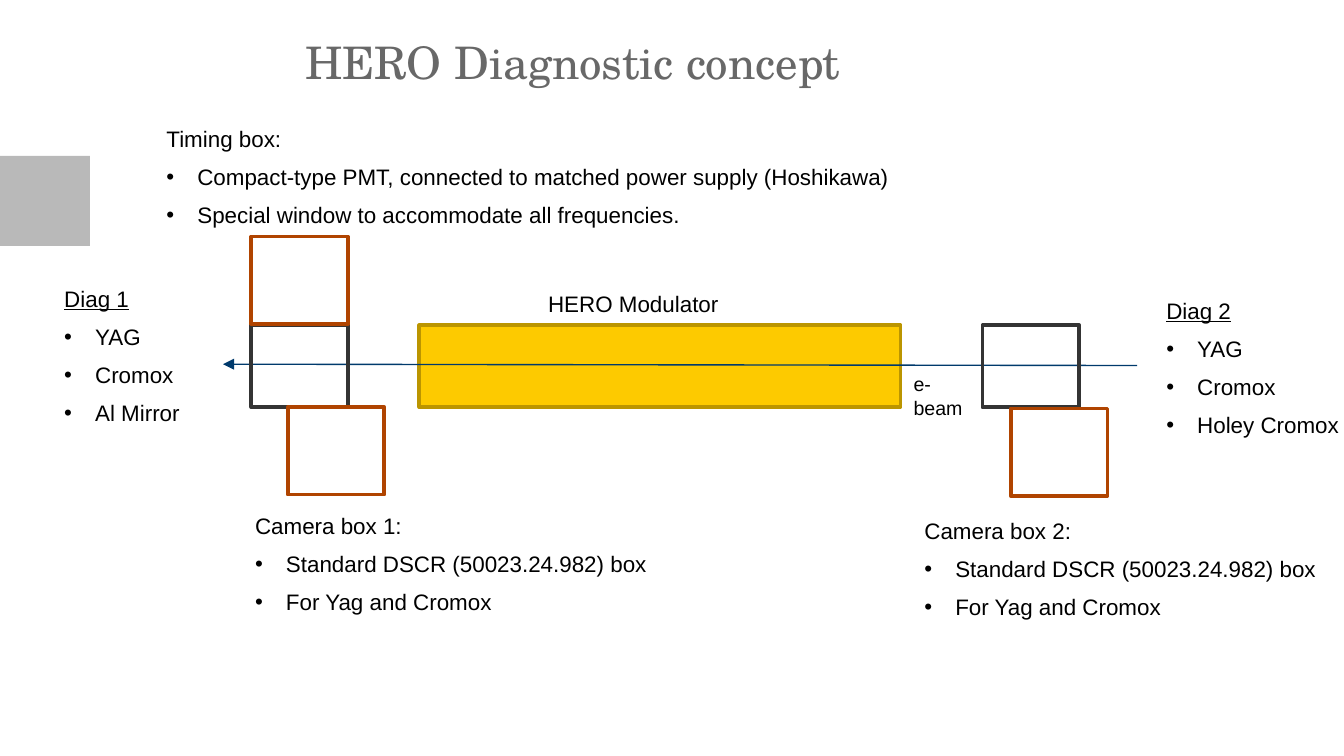
from lxml.etree import SubElement
from pptx import Presentation
from pptx.dml.color import RGBColor
from pptx.enum.shapes import MSO_CONNECTOR, MSO_SHAPE
from pptx.enum.text import MSO_ANCHOR, MSO_AUTO_SIZE, PP_ALIGN
from pptx.oxml.ns import qn
from pptx.util import Inches, Pt

COLORS = {
    "title": "686868", "text": "000000", "marker": "B9B9B9",
    "modulator": "FDCA00", "modulator_edge": "BB9500",
    "beam": "003A6C", "chamber": "343434", "box": "B04400",
}
TITLE = "HERO Diagnostic concept"
CAMERA_ITEMS = ["Standard DSCR (50023.24.982) box", "For Yag and Cromox"]

# heading, underlined, bullets, (left, top, width, height)
NOTES = [
    ("HERO Modulator", False, [], (3.98, 2.11, 1.48, 0.3)),
    ("Diag 1", True, ["YAG", "Cromox", "Al Mirror"], (0.38, 2.07, 1.07, 1.21)),
    ("Diag 2", True, ["YAG", "Cromox", "Holey Cromox"], (8.58, 2.16, 1.5, 1.21)),
    ("Camera box 1:", False, CAMERA_ITEMS, (1.8, 3.76, 3.14, 0.91)),
    ("Timing box:", False,
     ["Compact-type PMT, connected to matched power supply (Hoshikawa)",
      "Special window to accommodate all frequencies."],
     (1.14, 0.88, 5.68, 0.91)),
    ("Camera box 2:", False, CAMERA_ITEMS, (6.78, 3.8, 3.14, 0.91)),
]

UNIT_W, BOX_H = 0.72, 0.65
BEAMLINE_Y, BEAMLINE_H = 2.42, 0.61
CHAMBERS_X = [1.87, 7.31]
BOXES = [(2.14, 3.03), (1.87, 1.76), (7.52, 3.04)]  # camera 1, timing, camera 2


def rgb(name):
    return RGBColor.from_string(COLORS[name])


def add_rect(slide, left, top, width, height, fill=None, line=None):
    sp = slide.shapes.add_shape(
        MSO_SHAPE.RECTANGLE, *map(Inches, (left, top, width, height)))
    sp.shadow.inherit = False
    if fill:
        sp.fill.solid()
        sp.fill.fore_color.rgb = rgb(fill)
    else:
        sp.fill.background()
    if line:
        sp.line.color.rgb = rgb(line)
        sp.line.width = Pt(2)
    else:
        sp.line.fill.background()


def add_run(p, text, size, color="text", font="Arial"):
    r = p.add_run()
    r.text = text
    r.font.size = Pt(size)
    r.font.name = font
    r.font.color.rgb = rgb(color)
    return r


def add_text_frame(slide, at, wrap):
    tf = slide.shapes.add_textbox(*map(Inches, at)).text_frame
    tf.word_wrap = wrap
    tf.auto_size = MSO_AUTO_SIZE.SHAPE_TO_FIT_TEXT
    return tf


def add_note(slide, heading, underlined, items, at):
    tf = add_text_frame(slide, at, wrap=False)
    r = add_run(tf.paragraphs[0], heading, 12)
    if underlined:
        r.font.underline = True
    for item in items:
        p = tf.add_paragraph()
        p.space_before = Pt(6)
        pPr = p._p.get_or_add_pPr()
        pPr.set("marL", str(Inches(0.23)))
        pPr.set("indent", str(-Inches(0.23)))
        SubElement(pPr, qn("a:buFont"), typeface="Arial")
        SubElement(pPr, qn("a:buChar"), char="•")
        add_run(p, item, 12)


def add_beam(slide):
    beam = slide.shapes.add_connector(
        MSO_CONNECTOR.STRAIGHT, *map(Inches, (1.66, 2.71, 8.46, 2.72)))
    beam.line.color.rgb = rgb("beam")
    beam.line.width = Pt(0.75)
    spPr = beam._element.spPr
    SubElement(spPr.find(qn("a:ln")), qn("a:headEnd"), type="triangle")
    SubElement(spPr, qn("a:effectLst"))


def add_title(slide):
    title = slide.shapes.title
    title.left, title.top, title.width, title.height = map(
        Inches, (2.27, 0.24, 7.34, 0.42))
    tf = title.text_frame
    tf.margin_left = tf.margin_top = tf.margin_right = tf.margin_bottom = 0
    tf.vertical_anchor = MSO_ANCHOR.BOTTOM
    tf.auto_size = MSO_AUTO_SIZE.NONE
    p = tf.paragraphs[0]
    p.alignment = PP_ALIGN.LEFT
    add_run(p, TITLE, 24, "title", "TeX Gyre Schola")


def main():
    prs = Presentation()
    prs.slide_width = Inches(10)
    prs.slide_height = Inches(10 * 9 / 16)
    s = prs.slides.add_slide(prs.slide_layouts[5])

    add_title(s)
    add_rect(s, 0, 1.16, 0.67, 0.67, fill="marker")
    add_rect(s, 3.12, BEAMLINE_Y, 3.58, BEAMLINE_H, "modulator", "modulator_edge")
    add_beam(s)
    tf = add_text_frame(s, (6.7, 2.72, 0.64, 0.45), wrap=True)
    add_run(tf.paragraphs[0], "e-beam", 10.5)
    for x in CHAMBERS_X:
        add_rect(s, x, BEAMLINE_Y, UNIT_W, BEAMLINE_H, line="chamber")
    for x, y in BOXES:
        add_rect(s, x, y, UNIT_W, BOX_H, line="box")
    for note in NOTES:
        add_note(s, *note)

    prs.save("out.pptx")


if __name__ == "__main__":
    main()
